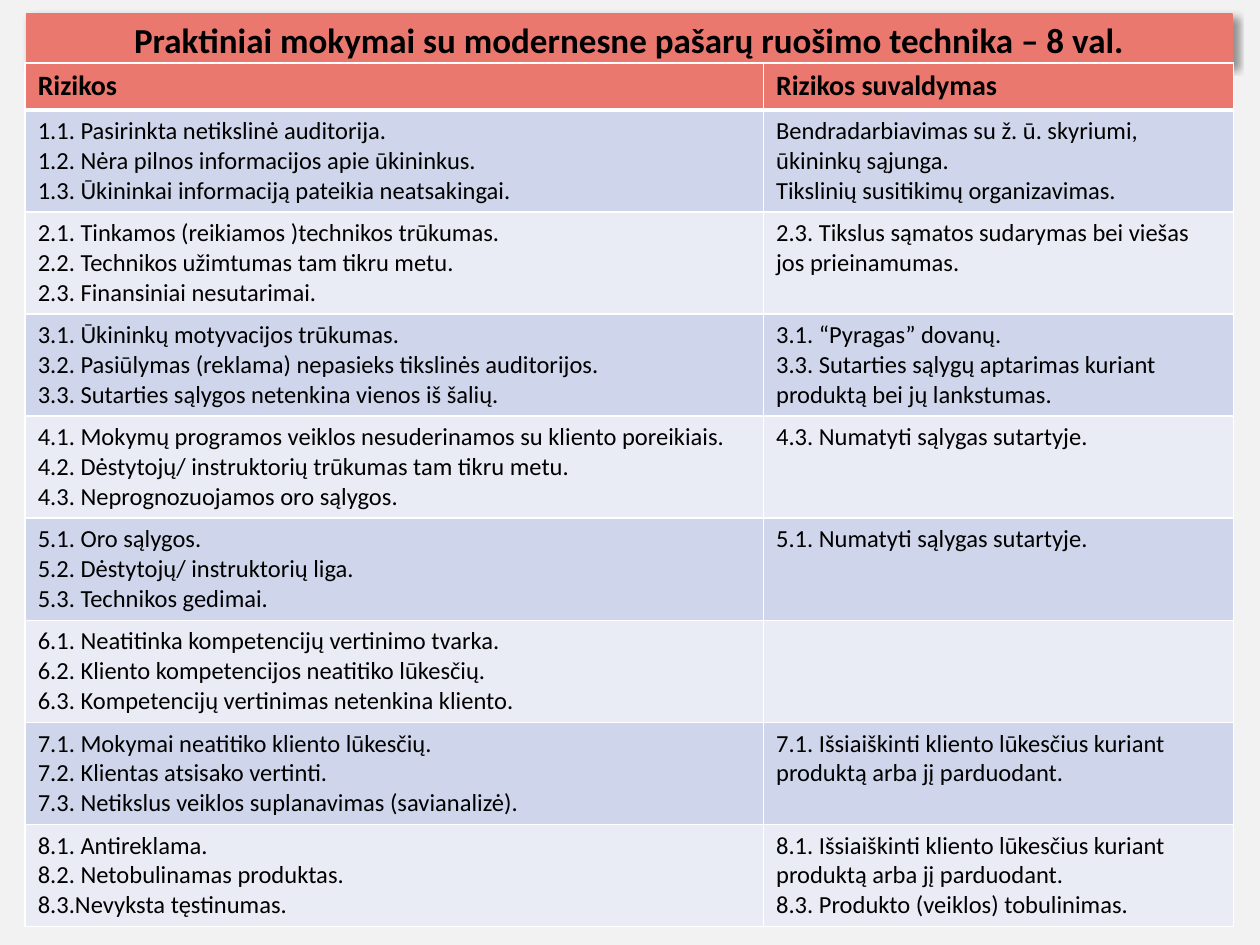
import pptx
import pptx.dml.color
import pptx.enum.shapes
import pptx.enum.text
import pptx.oxml
import pptx.oxml.ns
import pptx.util
from pptx.util import Inches

COLORS = {
    "background": "F2F2F2",
    "heading": "EB786F",
    "odd": "CFD5EA",
    "even": "E9EBF5",
    "border": "FFFFFF",
    "text": "000000",
}

TITLE = "Praktiniai mokymai su modernesne pašarų ruošimo technika – 8 val."
ROWS = [
    (["Rizikos"], ["Rizikos suvaldymas"]),
    (["1.1. Pasirinkta netikslinė auditorija.",
      "1.2. Nėra pilnos informacijos apie ūkininkus.",
      "1.3. Ūkininkai informaciją pateikia neatsakingai."],
     ["Bendradarbiavimas su ž. ū. skyriumi, ūkininkų sąjunga.",
      "Tikslinių susitikimų organizavimas."]),
    (["2.1. Tinkamos (reikiamos )technikos trūkumas.",
      "2.2. Technikos užimtumas tam tikru metu.",
      "2.3. Finansiniai nesutarimai."],
     ["2.3. Tikslus sąmatos sudarymas bei viešas jos prieinamumas."]),
    (["3.1. Ūkininkų motyvacijos trūkumas.",
      "3.2. Pasiūlymas (reklama) nepasieks tikslinės auditorijos.",
      "3.3. Sutarties sąlygos netenkina vienos iš šalių."],
     ["3.1. “Pyragas” dovanų.",
      "3.3. Sutarties sąlygų aptarimas kuriant produktą bei jų lankstumas."]),
    (["4.1. Mokymų programos veiklos nesuderinamos su kliento poreikiais.",
      "4.2. Dėstytojų/ instruktorių trūkumas tam tikru metu.",
      "4.3. Neprognozuojamos oro sąlygos."],
     ["4.3. Numatyti sąlygas sutartyje."]),
    (["5.1. Oro sąlygos.",
      "5.2. Dėstytojų/ instruktorių liga.",
      "5.3. Technikos gedimai."],
     ["5.1. Numatyti sąlygas sutartyje."]),
    (["6.1. Neatitinka kompetencijų vertinimo tvarka.",
      "6.2. Kliento kompetencijos neatitiko lūkesčių.",
      "6.3. Kompetencijų vertinimas netenkina kliento."],
     []),
    (["7.1. Mokymai neatitiko kliento lūkesčių.",
      "7.2. Klientas atsisako vertinti.",
      "7.3. Netikslus veiklos suplanavimas (savianalizė)."],
     ["7.1. Išsiaiškinti kliento lūkesčius kuriant produktą arba jį parduodant."]),
    (["8.1. Antireklama.",
      "8.2. Netobulinamas produktas.",
      "8.3.Nevyksta tęstinumas."],
     ["8.1. Išsiaiškinti kliento lūkesčius kuriant produktą arba jį parduodant.",
      "8.3. Produkto (veiklos) tobulinimas."]),
]


def paint(fill, name):
    fill.solid()
    fill.fore_color.rgb = pptx.dml.color.RGBColor.from_string(COLORS[name])


def write(frame, lines, size, bold):
    """Fill a text frame with one paragraph per line."""
    frame.text = "\n".join(lines)
    for para in frame.paragraphs:
        para.font.name = "Calibri"
        para.font.size = pptx.util.Pt(size)
        para.font.bold = bold
        paint(para.font.fill, "text")


deck = pptx.Presentation()
deck.slide_width = Inches(10)
deck.slide_height = Inches(7.5)
page = deck.slides.add_slide(deck.slide_layouts[6])
paint(page.background.fill, "background")

# Title bar with a soft shadow to the lower right
title = page.shapes.add_shape(pptx.enum.shapes.MSO_SHAPE.RECTANGLE,
                              Inches(0.21), Inches(0.11), Inches(9.57), Inches(0.4))
paint(title.fill, "heading")
paint(title.line.fill, "heading")
title.line.width = pptx.util.Pt(1)
title.shadow.inherit = False
effects = title._element.spPr.find(pptx.oxml.ns.qn("a:effectLst"))
effects.append(pptx.oxml.parse_xml(
    f'<a:outerShdw {pptx.oxml.ns.nsdecls("a")} blurRad="{pptx.util.Pt(4)}" '
    f'dist="{pptx.util.Pt(3)}" dir="{45 * 60000}" algn="tl" rotWithShape="0">'
    f'<a:srgbClr val="{COLORS["text"]}"><a:alpha val="40000"/></a:srgbClr></a:outerShdw>'))
write(title.text_frame, [TITLE], 20, True)
title.text_frame.vertical_anchor = pptx.enum.text.MSO_ANCHOR.MIDDLE
title.text_frame.paragraphs[0].alignment = pptx.enum.text.PP_ALIGN.CENTER

# Risk table
HEADER_HEIGHT, ROW_HEIGHT = 0.36, 0.81
table = page.shapes.add_table(
    len(ROWS), 2, Inches(0.2), Inches(0.5), Inches(9.59),
    Inches(HEADER_HEIGHT + ROW_HEIGHT * (len(ROWS) - 1))).table
table.columns[0].width = Inches(5.86)
table.columns[1].width = Inches(3.73)

for row, texts in enumerate(ROWS):
    is_header = row == 0
    table.rows[row].height = Inches(HEADER_HEIGHT if is_header else ROW_HEIGHT)
    band = "heading" if is_header else "odd" if row % 2 else "even"
    for column, lines in enumerate(texts):
        cell = table.cell(row, column)
        paint(cell.fill, band)
        write(cell.text_frame, lines, 16 if is_header else 14, is_header)
        widths = {"L": 1, "R": 1, "T": 3 if row == 1 else 1, "B": 3 if is_header else 1}
        for position, (side, width) in enumerate(widths.items()):
            cell._tc.tcPr.insert(position, pptx.oxml.parse_xml(
                f'<a:ln{side} {pptx.oxml.ns.nsdecls("a")} w="{pptx.util.Pt(width)}">'
                f'<a:solidFill><a:srgbClr val="{COLORS["border"]}"/></a:solidFill></a:ln{side}>'))

for para in table.cell(1, 0).text_frame.paragraphs:
    properties = para._p.get_or_add_pPr()
    properties.set("marL", str(Inches(0.38)))
    properties.set("indent", str(-Inches(0.38)))

deck.save("out.pptx")
